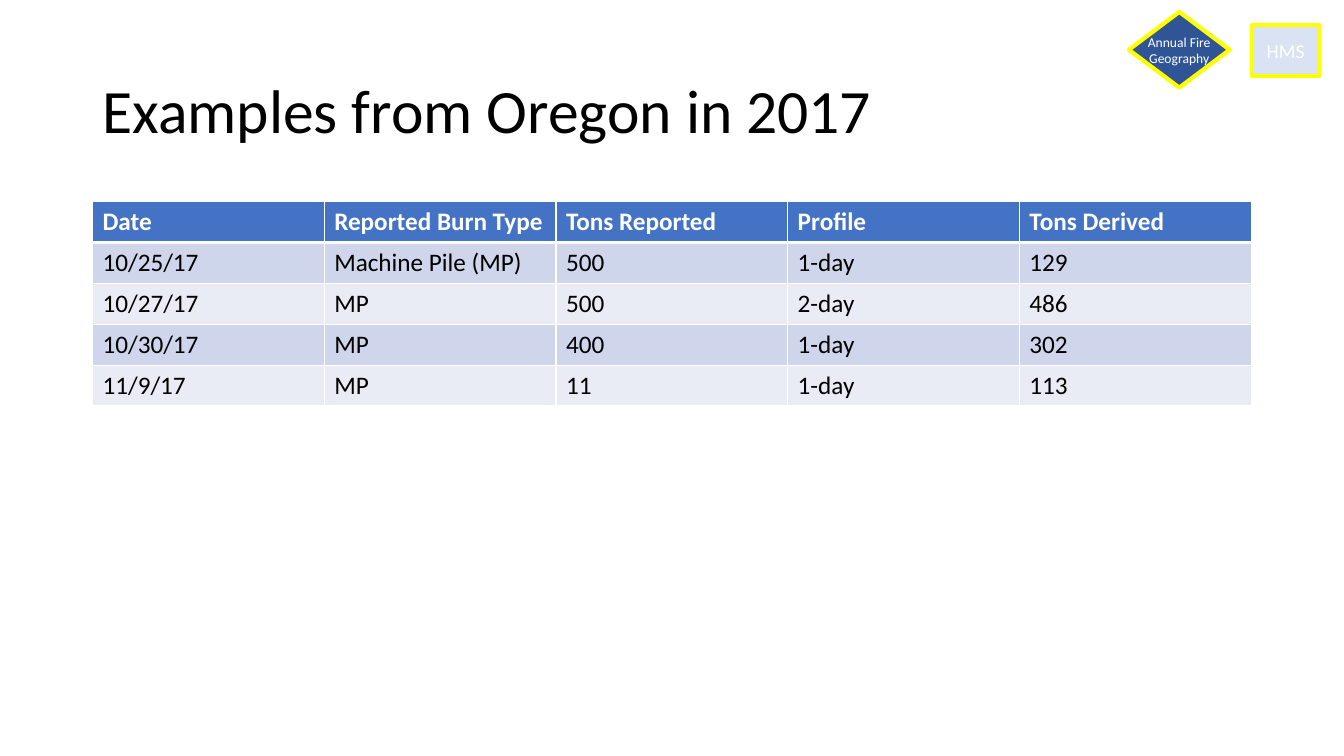
from lxml import etree
from pptx import Presentation
from pptx.dml.color import RGBColor
from pptx.enum.shapes import MSO_SHAPE
from pptx.enum.text import MSO_ANCHOR, MSO_AUTO_SIZE, PP_ALIGN
from pptx.oxml.ns import qn
from pptx.util import Cm, Pt

RECTANGLE, DIAMOND = MSO_SHAPE.RECTANGLE, MSO_SHAPE.DIAMOND
MIDDLE, TOP = MSO_ANCHOR.MIDDLE, MSO_ANCHOR.TOP
LEFT, CENTER = PP_ALIGN.LEFT, PP_ALIGN.CENTER
NO_AUTOFIT = MSO_AUTO_SIZE.NONE

FONT = "Calibri"
WHITE, BLACK, YELLOW = "FFFFFF", "000000", "FFFF00"
HEADER_FILL = "4472C4"
BAND_FILLS = ["CFD5EA", "E9EBF5"]

BURNS = [
    ["Date", "Reported Burn Type", "Tons Reported", "Profile", "Tons Derived"],
    ["10/25/17", "Machine Pile (MP)", "500", "1-day", "129"],
    ["10/27/17", "MP", "500", "2-day", "486"],
    ["10/30/17", "MP", "400", "1-day", "302"],
    ["11/9/17", "MP", "11", "1-day", "113"],
]


def color(value):
    return RGBColor.from_string(value)


def fill_solid(item, value):
    item.fill.solid()
    item.fill.fore_color.rgb = color(value)


def write(frame, text, size, ink, bold=False, align=LEFT, anchor=TOP, spacing=None):
    """Put formatted text in a frame; a vertical tab breaks the line."""
    frame.vertical_anchor = anchor
    frame.text = text
    for para in frame.paragraphs:
        para.alignment = align
        para.line_spacing = spacing
        for span in para.runs:
            span.font.name = FONT
            span.font.size = Pt(size)
            span.font.bold = bold
            span.font.color.rgb = color(ink)


def add_title(page, text):
    title = page.shapes.title
    title.left, title.top = Cm(2.33), Cm(1.01)
    title.width, title.height = Cm(29.21), Cm(3.68)
    write(title.text_frame, text, 44, BLACK, anchor=MIDDLE, spacing=0.9)
    title.text_frame.auto_size = NO_AUTOFIT


def set_borders(cell, widths):
    properties = cell._tc.get_or_add_tcPr()
    for side, width in widths.items():
        line = etree.SubElement(properties, qn(f"a:ln{side}"), w=str(Pt(width)))
        solid = etree.SubElement(line, qn("a:solidFill"))
        etree.SubElement(solid, qn("a:srgbClr"), val=WHITE)


def add_burn_table(page, rows):
    row_count, column_count = len(rows), len(rows[0])
    table = page.shapes.add_table(
        row_count, column_count, Cm(2.33), Cm(5.08),
        Cm(5.84) * column_count, Cm(1.03) * row_count).table
    for row, texts in enumerate(rows):
        header = row == 0
        for column, text in enumerate(texts):
            cell = table.cell(row, column)
            set_borders(cell, {"L": 1, "R": 1, "T": 3 if row == 1 else 1,
                               "B": 3 if header else 1})
            fill_solid(cell, HEADER_FILL if header else BAND_FILLS[(row - 1) % 2])
            write(cell.text_frame, text, 18, WHITE if header else BLACK, bold=header)


def add_badge(page, kind, left, top, width, height, fill, text, size):
    badge = page.shapes.add_shape(kind, Cm(left), Cm(top), Cm(width), Cm(height))
    badge.shadow.inherit = False
    fill_solid(badge, fill)
    badge.line.color.rgb = color(YELLOW)
    badge.line.width = Pt(3)
    write(badge.text_frame, text, size, WHITE, align=CENTER, anchor=MIDDLE)
    badge.text_frame.word_wrap = False


def main():
    deck = Presentation()
    deck.slide_width, deck.slide_height = Cm(33.87), Cm(19.05)
    page = deck.slides.add_slide(deck.slide_layouts.get_by_name("Title Only"))
    fill_solid(page.background, WHITE)

    # Title and burn table
    add_title(page, "Examples from Oregon in 2017")
    add_burn_table(page, BURNS)

    # Badges in the top right corner
    add_badge(page, RECTANGLE, 31.55, 0.64, 1.7, 1.27, "DAE3F3", "HMS", 14)
    add_badge(page, DIAMOND, 28.45, 0.3, 2.54, 1.91, "2F5597",
              "Annual Fire\vGeography", 9.7)

    deck.save("out.pptx")


if __name__ == "__main__":
    main()
